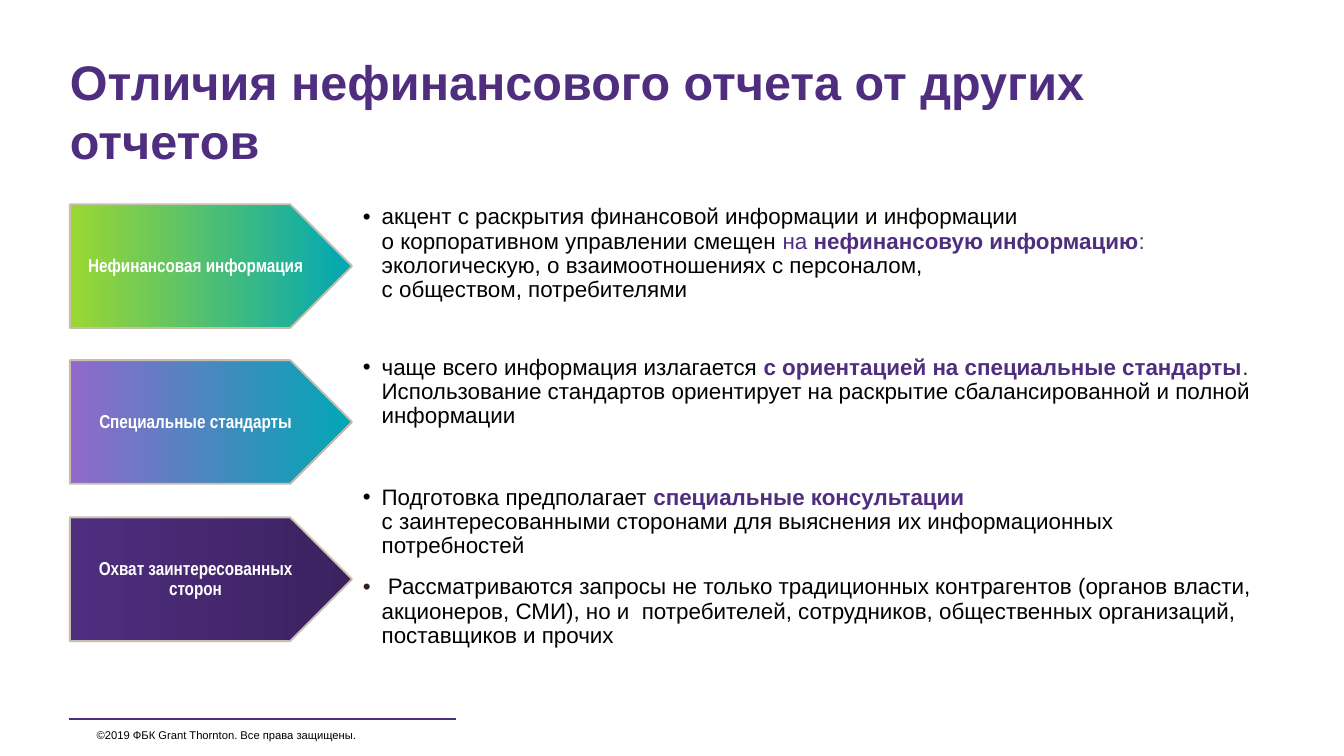
from pptx import Presentation
from pptx.util import Inches, Pt
from pptx.dml.color import RGBColor as RGB
from pptx.enum.shapes import MSO_SHAPE as SHAPE, MSO_CONNECTOR as CONN
from pptx.enum.text import PP_ALIGN as ALIGN, MSO_ANCHOR as ANCHOR, MSO_AUTO_SIZE as FIT
from pptx.oxml.ns import qn
from lxml.etree import SubElement

THEME = dict(
    violet="4F2D7F", black="000000", white="FFFFFF", brown="382218", edge="C8BEAF",
    lime="9BD732", teal="00A7B5", lilac="9169CA", dark="3B225F",
    head=26, body=12, label=10, foot=6, font="Arial", narrow="Arial Narrow",
)


def set_frame(frame, left, top, right, base, anchor=ANCHOR.MIDDLE):
    look = dict(margin_left=Inches(left), margin_top=Inches(top),
                margin_right=Inches(right), margin_bottom=Inches(base),
                vertical_anchor=anchor, word_wrap=True, auto_size=FIT.NONE)
    for key, val in look.items():
        setattr(frame, key, val)


def add_text(para, text, size, color, bold=False, font="font"):
    for i, part in enumerate(text.split("\n")):
        if i:
            para.add_line_break()
        if part:
            run = para.add_run()
            run.text = part
            look = dict(name=THEME[font], size=Pt(THEME[size]), bold=bold)
            for key, val in look.items():
                setattr(run.font, key, val)
            run.font.color.rgb = RGB.from_string(THEME[color])


# Widescreen slide, 16 to 9
deck = Presentation()
deck.slide_width = Inches(10)
deck.slide_height = Inches(10 * 9 / 16)
slide = deck.slides.add_slide(deck.slide_layouts[5])
shapes = slide.shapes

# Title
title = shapes.title
title.left, title.top = Inches(0.52), Inches(0.39)
title.width, title.height = Inches(8.97), Inches(0.92)
set_frame(title.text_frame, 0, 0, 0, 0, ANCHOR.TOP)
para = title.text_frame.paragraphs[0]
para.alignment = ALIGN.LEFT
add_text(para, "Отличия нефинансового отчета от других отчетов", "head", "violet", True)

# Footer rule and copyright line
rule = shapes.add_connector(CONN.STRAIGHT, Inches(0.51), Inches(5.35), Inches(3.39), Inches(5.35))
rule.line.color.rgb = RGB.from_string(THEME["violet"])
rule.line.width = Pt(1.5)
SubElement(rule._element.spPr, qn("a:effectLst"))
foot = shapes.add_textbox(Inches(0.72), Inches(5.37), Inches(2.87), Inches(0.2))
set_frame(foot.text_frame, 0, 0.05, 0, 0.05)
add_text(foot.text_frame.paragraphs[0], "©2019 ФБК Grant Thornton. Все права защищены.", "foot", "black")

# Rows: label, gradient, arrow top, panel (top, width, height, insets), paragraphs of (text, colour, bold)
rows = [
    ("Нефинансовая информация", ("lime", "teal"), 1.52, (1.41, 7.05, 0.96, 0.15, 0.25), [[
        ("акцент с раскрытия финансовой информации и информации\n"
         "о корпоративном управлении смещен ", "black", False),
        ("на ", "violet", False),
        ("нефинансовую информацию", "violet", True),
        (": ", "violet", False),
        ("экологическую, о взаимоотношениях с персоналом,\n"
         "с обществом, потребителями", "black", False)]]),
    ("Специальные стандарты", ("lilac", "teal"), 2.68, (2.44, 6.97, 0.96, 0.15, 0.25), [[
        ("чаще всего информация излагается ", "black", False),
        ("с ориентацией на специальные стандарты", "violet", True),
        (". ", "brown", False),
        ("Использование стандартов ориентирует на раскрытие "
         "сбалансированной и полной информации", "black", False)]]),
    ("Охват заинтересованных сторон", ("violet", "dark"), 3.85, (3.46, 6.97, 1.52, 0.17, 0.27), [
        [("Подготовка предполагает ", "black", False),
         ("специальные консультации\n", "violet", True),
         ("с заинтересованными сторонами для выяснения их информационных "
          "потребностей", "black", False)],
        [(" ", "brown", False),
         ("Рассматриваются запросы не только традиционных контрагентов "
          "(органов власти, акционеров, СМИ), но и  потребителей, сотрудников, "
          "общественных организаций, поставщиков и прочих", "black", False)]]),
]

for label, tones, top, (y, wide, high, pad, right), paras in rows:
    # Bulleted panel
    panel = shapes.add_shape(SHAPE.RECTANGLE, Inches(2.7), Inches(y), Inches(wide), Inches(high))
    panel.shadow.inherit = False
    panel.fill.solid()
    panel.fill.fore_color.rgb = RGB.from_string(THEME["white"])
    tint = panel._element.spPr.find(qn("a:solidFill"))[0]
    SubElement(tint, qn("a:alpha"), val="90000")
    panel.line.fill.background()
    frame = panel.text_frame
    set_frame(frame, 0, pad, right, pad)
    for i, runs in enumerate(paras):
        para = frame.add_paragraph() if i else frame.paragraphs[0]
        look = dict(level=1, alignment=ALIGN.LEFT, line_spacing=0.9, space_after=Pt(9))
        for key, val in look.items():
            setattr(para, key, val)
        props = para._p.get_or_add_pPr()
        props.set("marL", str(Inches(0.14)))
        props.set("indent", str(Inches(-0.14)))
        SubElement(props, qn("a:buFont"), typeface=THEME["font"])
        SubElement(props, qn("a:buChar"), char="•")
        for text, color, bold in runs:
            add_text(para, text, "body", color, bold)

    # Gradient arrow
    arrow = shapes.add_shape(SHAPE.PENTAGON, Inches(0.52), Inches(top), Inches(2.1), Inches(0.92))
    arrow.shadow.inherit = False
    arrow.fill.gradient()
    arrow.fill.gradient_angle = 0
    for i, stop in enumerate(arrow.fill.gradient_stops):
        stop.position = i
        stop.color.rgb = RGB.from_string(THEME[tones[i]])
    arrow.line.color.rgb = RGB.from_string(THEME["edge"])
    arrow.line.width = Pt(1)
    set_frame(arrow.text_frame, 0.08, 0.08, 0.08, 0.08)
    para = arrow.text_frame.paragraphs[0]
    para.alignment, para.line_spacing = ALIGN.CENTER, 0.9
    add_text(para, label, "label", "white", True, "narrow")

deck.save("out.pptx")
